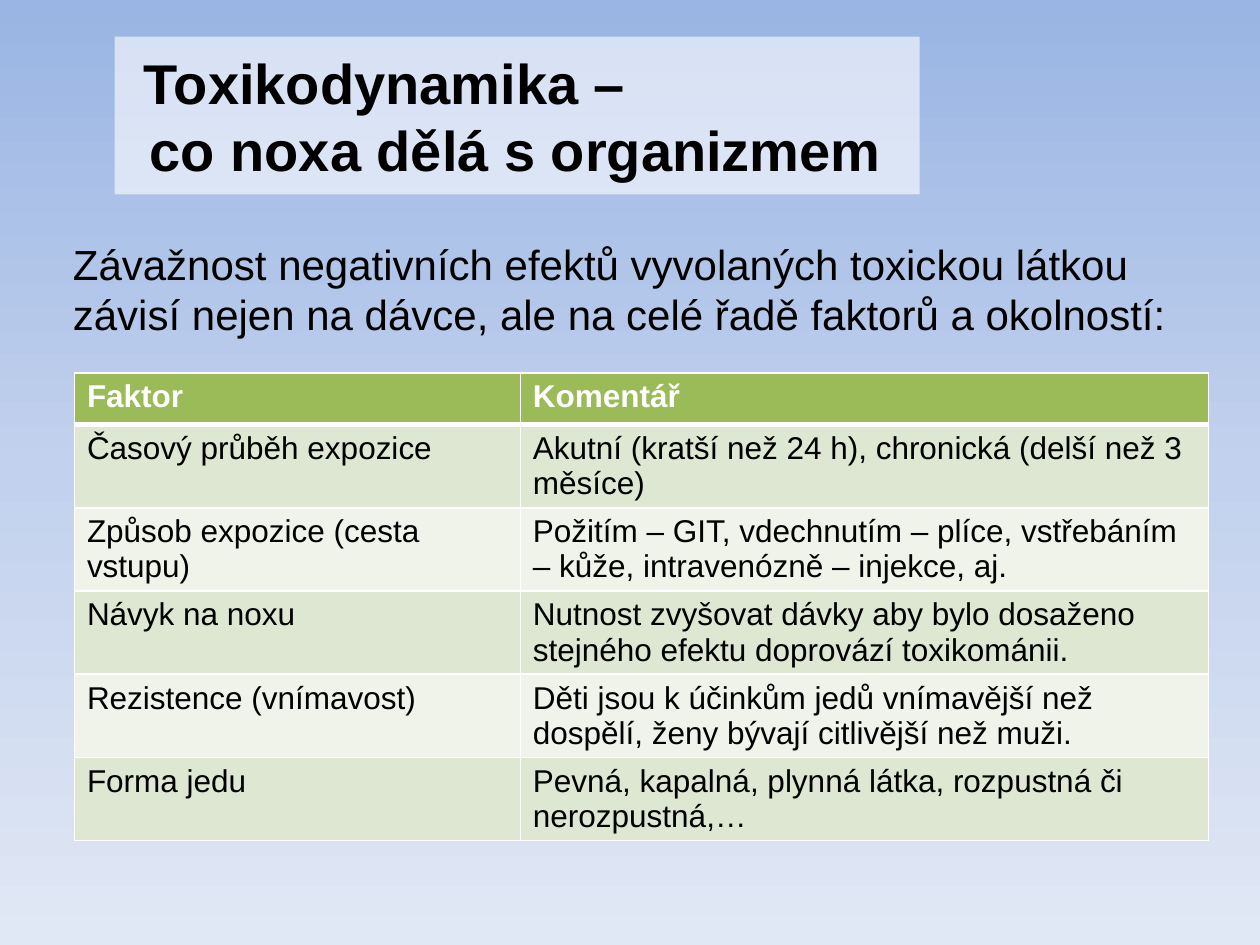
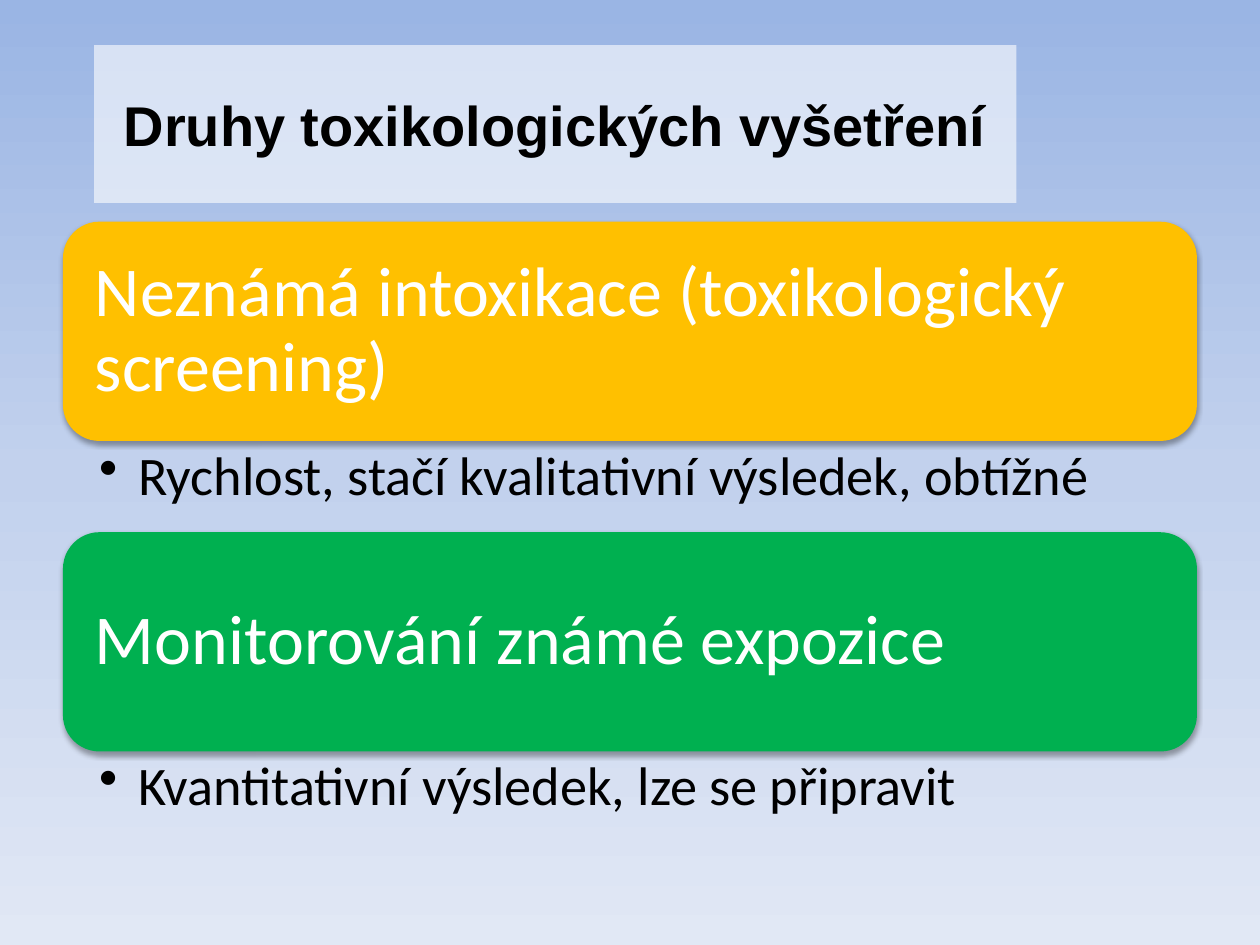
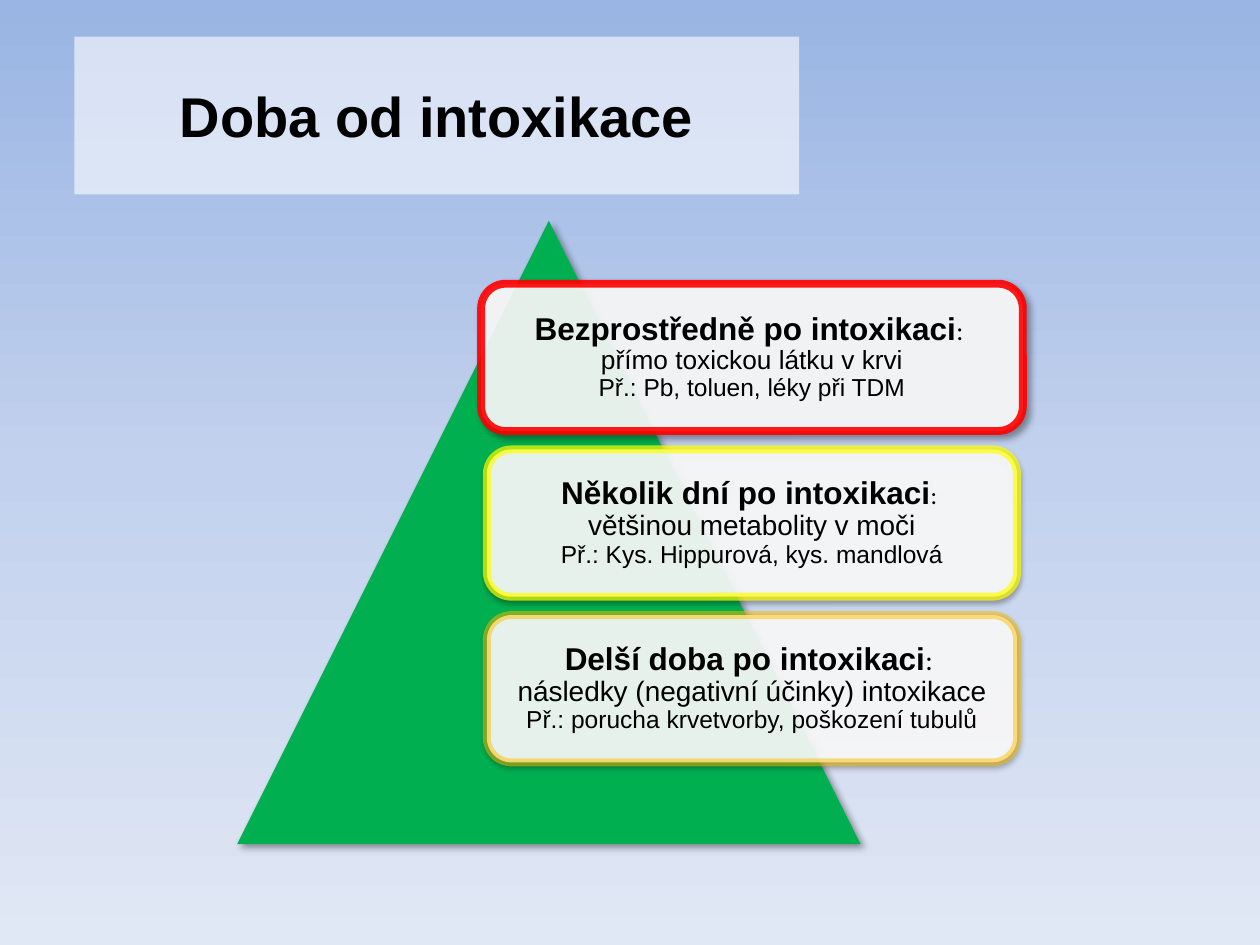
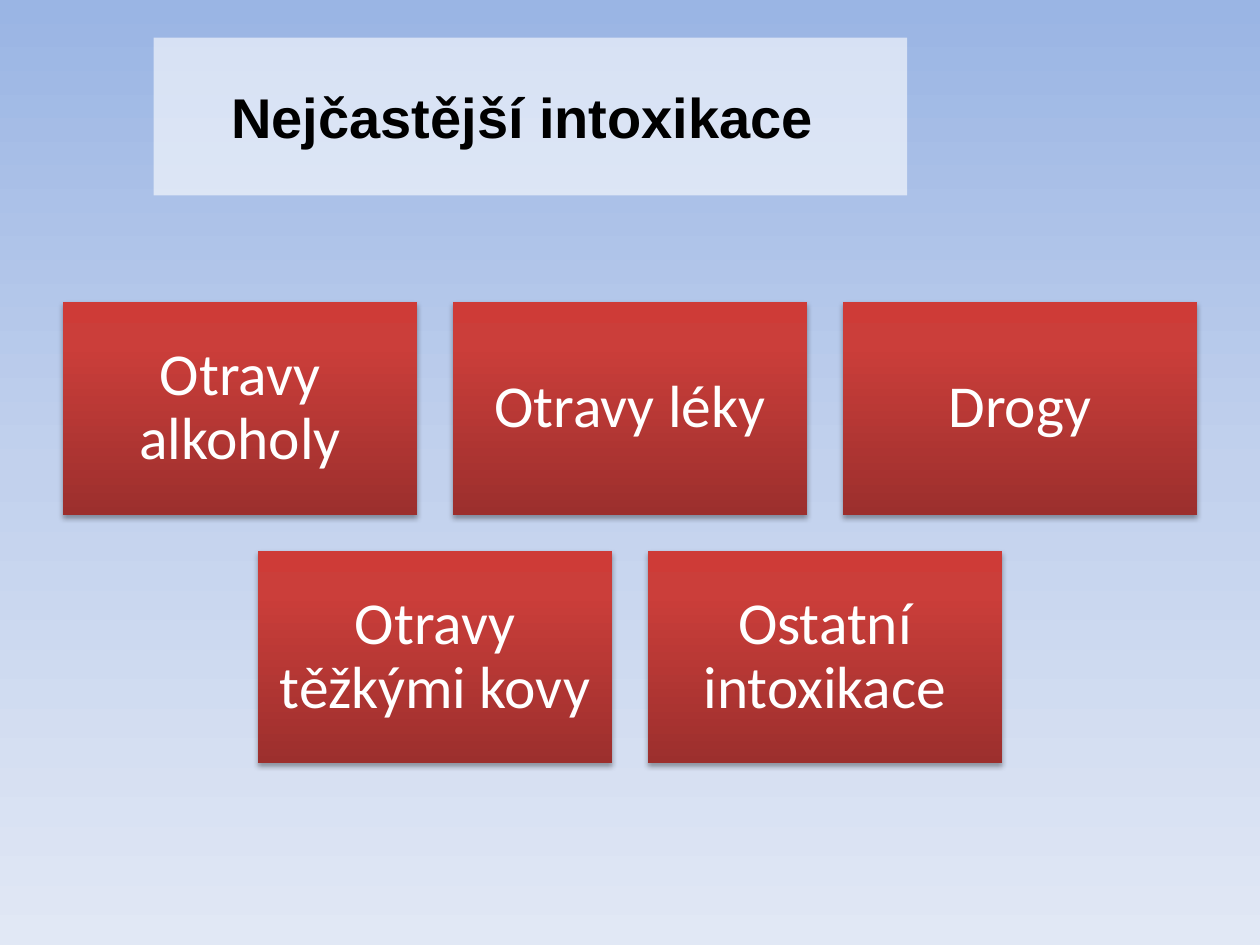
import pptx
import pptx.dml.color
import pptx.enum.shapes
import pptx.enum.text
import pptx.oxml.ns
import pptx.util
from lxml import etree

Cm = pptx.util.Cm
Pt = pptx.util.Pt
qn = pptx.oxml.ns.qn
SHAPES = pptx.enum.shapes.MSO_SHAPE
ALIGN = pptx.enum.text.PP_ALIGN
ANCHOR = pptx.enum.text.MSO_ANCHOR

SLIDE_WIDTH, SLIDE_HEIGHT = 25.4, 19.05
WHITE, BLACK, GREEN, AMBER = "FFFFFF", "000000", "00B050", "FFC000"
SKY = [(0, "9AB5E4"), (50, "C2D1ED"), (100, "E1E8F5")]
BRICK = [(0, "CE3B37"), (20, "CB3E3A"), (100, "9C2F2D")]
HEADER_GREEN, BAND_COLORS = "9BBB59", ("DEE7D1", "EFF3EA")
SOFT_SHADOW = {"alpha": 35, "blur": 3.1, "distance": 1.8, "angle": 90}
DEEP_SHADOW = {"alpha": 40, "blur": 4, "distance": 3, "angle": 45}

FACTORS = [
    ("Faktor", "Komentář"),
    ("Časový průběh expozice", "Akutní (kratší než 24 h), chronická (delší než 3 měsíce)"),
    ("Způsob expozice (cesta vstupu)",
     "Požitím – GIT, vdechnutím – plíce, vstřebáním – kůže, intravenózně – injekce, aj."),
    ("Návyk na noxu",
     "Nutnost zvyšovat dávky aby bylo dosaženo stejného efektu doprovází toxikománii."),
    ("Rezistence (vnímavost)",
     "Děti jsou k účinkům jedů vnímavější než dospělí, ženy bývají citlivější než muži."),
    ("Forma jedu", "Pevná, kapalná, plynná látka, rozpustná či nerozpustná,…"),
]
EXAMINATIONS = [
    (AMBER, "Neznámá intoxikace (toxikologický screening)",
     "Rychlost, stačí kvalitativní výsledek, obtížné"),
    (GREEN, "Monitorování známé expozice", "Kvantitativní výsledek, lze se připravit"),
]
PHASES = [
    ("Bezprostředně po intoxikaci", "přímo toxickou látku v krvi",
     "Př.: Pb, toluen, léky při TDM", (15, 15), 10.92, "FF0000", 90, DEEP_SHADOW),
    ("Několik dní po intoxikaci", "většinou metabolity v moči",
     "Př.: Kys. Hippurová, kys. mandlová", (14, 16), 10.69, "FFFF00", 70, SOFT_SHADOW),
    ("Delší doba po intoxikaci", "následky (negativní účinky) intoxikace",
     "Př.: porucha krvetvorby, poškození tubulů", (16, 16), 10.69, AMBER, 50, SOFT_SHADOW),
]
POISONINGS = [
    ("Otravy alkoholy", "Otravy léky", "Drogy"),
    ("Otravy těžkými kovy", "Ostatní intoxikace"),
]


def color(value):
    return pptx.dml.color.RGBColor.from_string(value)


def fill_gradient(fill, element, stops):
    fill.gradient()
    fill.gradient_angle = 270
    stop_list = element.find(".//" + qn("a:gsLst"))
    for stop in list(stop_list):
        stop_list.remove(stop)
    for position, value in stops:
        stop = etree.SubElement(stop_list, qn("a:gs"), pos=str(position * 1000))
        etree.SubElement(stop, qn("a:srgbClr"), val=value)


def set_alpha(shape, owner, percent):
    for tint in shape.element.spPr.xpath(owner + "a:solidFill/a:srgbClr"):
        etree.SubElement(tint, qn("a:alpha"), val=str(percent * 1000))


def set_shadow(shape, alpha, blur, distance, angle):
    effects = shape.element.spPr.find(qn("a:effectLst"))
    outer = etree.SubElement(
        effects, qn("a:outerShdw"), blurRad=str(Pt(blur)), dist=str(Pt(distance)),
        dir=str(angle * 60000), rotWithShape="0")
    tint = etree.SubElement(outer, qn("a:srgbClr"), val=BLACK)
    etree.SubElement(tint, qn("a:alpha"), val=str(alpha * 1000))


def add_block(slide, kind, box, fill, alpha=None, shadow=None):
    block = slide.shapes.add_shape(kind, *map(Cm, box))
    block.shadow.inherit = False
    block.line.fill.background()
    if isinstance(fill, list):
        fill_gradient(block.fill, block.element, fill)
    else:
        block.fill.solid()
        block.fill.fore_color.rgb = color(fill)
    if alpha:
        set_alpha(block, "", alpha)
    if shadow:
        set_shadow(block, **shadow)
    return block


def set_font(font, size, name, value=BLACK, bold=False):
    font.size = Pt(size)
    font.name = name
    font.bold = bold
    font.color.rgb = color(value)


def set_frame(frame, margins, anchor=ANCHOR.MIDDLE):
    frame.word_wrap = True
    frame.vertical_anchor = anchor
    (frame.margin_left, frame.margin_top,
     frame.margin_right, frame.margin_bottom) = map(Cm, margins)
    return frame.paragraphs[0]


def write_label(block, text, size, margin, align):
    label = set_frame(block.text_frame, [margin] * 4)
    label.text = text
    label.alignment = align
    label.line_spacing = 0.9
    set_font(label.font, size, "Calibri", WHITE)


def add_text(slide, box, text, size, name, margins=(0.25, 0.13, 0.25, 0.13), bullet=False):
    note = slide.shapes.add_textbox(*map(Cm, box))
    paragraph = set_frame(note.text_frame, margins, ANCHOR.TOP)
    paragraph.text = text
    if bullet:
        paragraph.line_spacing = 0.9
        properties = paragraph._p.get_or_add_pPr()
        properties.set("marL", str(Cm(0.79)))
        properties.set("indent", str(Cm(-0.79)))
        etree.SubElement(properties, qn("a:buChar"), char="•")
    set_font(paragraph.font, size, name)


def add_title(slide, left, top, width, text):
    band = add_block(slide, SHAPES.RECTANGLE, (left, top, width, 3.18), WHITE, alpha=60)
    title = set_frame(band.text_frame, (0.25, 0.13, 0.25, 0.13))
    title.text = text
    title.alignment = ALIGN.CENTER
    set_font(title.font, 32, "Arial", bold=True)
    return title


def style_cell(cell, text, fill, value, bold, bottom_width):
    properties = cell._tc.get_or_add_tcPr()
    for side, width in (("L", 1), ("R", 1), ("T", 1), ("B", bottom_width)):
        border = etree.SubElement(properties, qn("a:ln" + side), w=str(Pt(width)))
        solid = etree.SubElement(border, qn("a:solidFill"))
        etree.SubElement(solid, qn("a:srgbClr"), val=WHITE)
    cell.fill.solid()
    cell.fill.fore_color.rgb = color(fill)
    cell.text = text
    set_font(cell.text_frame.paragraphs[0].font, 18, "Arial", value, bold)


def add_factor_table(slide):
    row_height = 1.04
    table = slide.shapes.add_table(
        len(FACTORS), 2, Cm(1.5), Cm(7.52), Cm(22.86), Cm(row_height * len(FACTORS))).table
    table.columns[0].width, table.columns[1].width = Cm(8.99), Cm(13.87)
    for row, texts in enumerate(FACTORS):
        table.rows[row].height = Cm(row_height)
        for column, text in enumerate(texts):
            cell = table.cell(row, column)
            if row == 0:
                style_cell(cell, text, HEADER_GREEN, WHITE, True, 3)
            else:
                style_cell(cell, text, BAND_COLORS[(row - 1) % 2], BLACK, False, 1)


def add_phase(slide, top, phase):
    heading, finding, example, sizes, width, outline, opacity, shadow = phase
    card = add_block(slide, SHAPES.ROUNDED_RECTANGLE, (15.16 - width / 2, top, width, 2.97),
                     WHITE, alpha=90, shadow=shadow)
    card.line.color.rgb = color(outline)
    card.line.width = Pt(4.5)
    set_alpha(card, "a:ln/", opacity)
    paragraph = set_frame(card.text_frame, [0.18] * 4)
    paragraph.alignment = ALIGN.CENTER
    paragraph.line_spacing = 0.9
    set_font(paragraph.font, 14, "Arial")
    lines = [
        [(heading, 18, "Arial", True), (": ", sizes[0], "Calibri", False)],
        [(finding, sizes[1], "Arial", False)],
        [(example, 14, "Arial", False)],
    ]
    for number, line in enumerate(lines):
        if number:
            paragraph.add_line_break()
        for text, size, name, bold in line:
            run = paragraph.add_run()
            run.text = text
            set_font(run.font, size, name, bold=bold)


def build_toxicodynamics(slide):
    title = add_title(slide, 2.31, 0.74, 16.23, "Toxikodynamika –\vco noxa dělá s organizmem")
    title.alignment = ALIGN.LEFT
    properties = title._p.get_or_add_pPr()
    properties.set("marL", str(Cm(0.46)))
    properties.set("indent", str(Cm(-0.12)))
    add_factor_table(slide)
    add_text(slide, (1.22, 4.67, 22.81, 2.31),
             "Závažnost negativních efektů vyvolaných toxickou látkou závisí nejen na dávce, "
             "ale na celé řadě faktorů a okolností:", 24, "Arial")


def build_examinations(slide):
    add_title(slide, 1.9, 0.91, 18.59, "Druhy toxikologických vyšetření")
    left, top, width, bar_height, note_height = 1.27, 4.47, 22.86, 4.42, 1.84
    for fill, heading, note in EXAMINATIONS:
        bar = add_block(slide, SHAPES.ROUNDED_RECTANGLE, (left, top, width, bar_height),
                        fill, shadow=SOFT_SHADOW)
        write_label(bar, heading, 40, 0.43, ALIGN.LEFT)
        add_text(slide, (left, top + bar_height, width, note_height), note, 31, "Calibri",
                 (0.73, 0.15, 0.78, 0.15), bullet=True)
        top += bar_height + note_height


def build_phases(slide):
    add_title(slide, 1.5, 0.74, 14.61, "Doba od intoxikace")
    add_block(slide, SHAPES.ISOSCELES_TRIANGLE, (4.78, 4.45, 12.57, 12.57),
              GREEN, shadow=DEEP_SHADOW)
    for number, phase in enumerate(PHASES):
        add_phase(slide, 5.72 + 3.34 * number, phase)


def build_poisonings(slide):
    add_title(slide, 3.1, 0.76, 15.19, "Nejčastější intoxikace ")
    width, height, gap = 7.14, 4.29, 0.72
    for row, labels in enumerate(POISONINGS):
        row_width = len(labels) * (width + gap) - gap
        left = (SLIDE_WIDTH - row_width) / 2
        top = 6.09 + row * (height + gap)
        for column, label in enumerate(labels):
            tile = add_block(slide, SHAPES.RECTANGLE,
                             (left + column * (width + gap), top, width, height),
                             BRICK, shadow=SOFT_SHADOW)
            write_label(tile, label, 34, 0.36, ALIGN.CENTER)


def main():
    deck = pptx.Presentation()
    deck.slide_width, deck.slide_height = Cm(SLIDE_WIDTH), Cm(SLIDE_HEIGHT)
    master = deck.slide_master
    fill_gradient(master.background.fill, master.element, SKY)
    for build in (build_toxicodynamics, build_examinations, build_phases, build_poisonings):
        build(deck.slides.add_slide(deck.slide_layouts[6]))
    deck.save("out.pptx")


if __name__ == "__main__":
    main()
